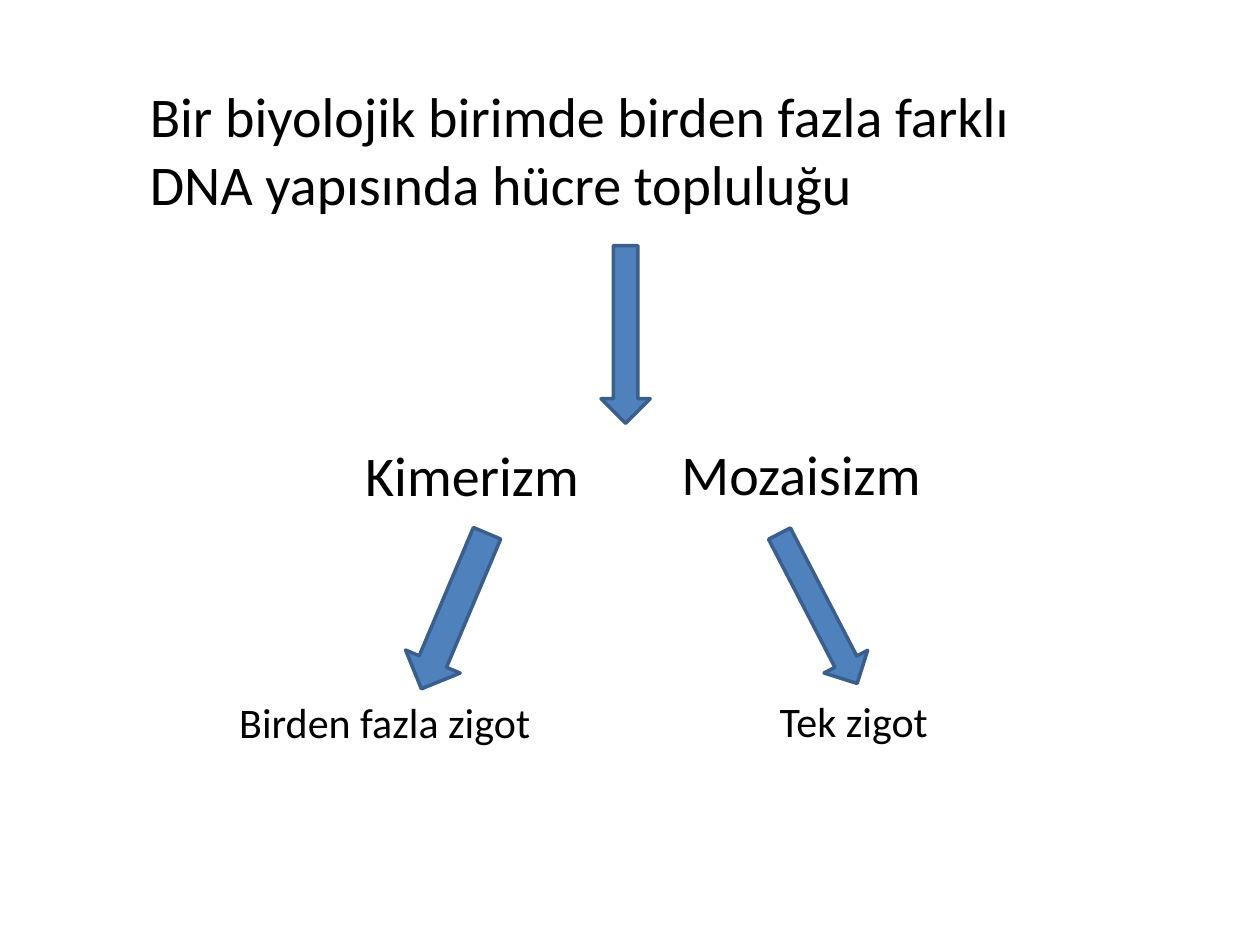
from dataclasses import dataclass

import pptx
import pptx.dml.color
import pptx.enum.shapes
import pptx.util
from pptx.util import Inches


@dataclass(frozen=True)
class Theme:
    font: str = "Calibri"
    text: str = "000000"
    fill: str = "4F81BD"
    line: str = "3A5F8C"
    heading: int = 32
    detail: int = 24
    outline: int = 2


def rgb(value):
    return pptx.dml.color.RGBColor.from_string(value)


class Diagram:
    def __init__(self, slide, theme):
        self.slide = slide
        self.theme = theme

    def label(self, text, left, top, width, height, size):
        box = self.slide.shapes.add_textbox(
            Inches(left), Inches(top), Inches(width), Inches(height))
        tf = box.text_frame
        tf.word_wrap = True
        tf.text = text
        font = tf.paragraphs[0].runs[0].font
        font.name = self.theme.font
        font.size = pptx.util.Pt(size)
        font.color.rgb = rgb(self.theme.text)

    def down_arrow(self, left, top, width, height, rotation=0):
        s = self.slide.shapes.add_shape(
            pptx.enum.shapes.MSO_SHAPE.DOWN_ARROW,
            Inches(left), Inches(top), Inches(width), Inches(height))
        s.rotation = rotation
        s.shadow.inherit = False
        s.fill.solid()
        s.fill.fore_color.rgb = rgb(self.theme.fill)
        s.line.color.rgb = rgb(self.theme.line)
        s.line.width = pptx.util.Pt(self.theme.outline)


def main():
    prs = pptx.Presentation()
    prs.slide_width, prs.slide_height = Inches(10), Inches(7.5)
    theme = Theme()
    diagram = Diagram(prs.slides.add_slide(prs.slide_layouts[6]), theme)

    diagram.label("Bir biyolojik birimde birden fazla farklı DNA yapısında hücre topluluğu",
                  1.09, 0.6, 7.81, 1.18, theme.heading)
    diagram.down_arrow(4.77, 1.95, 0.39, 1.41)

    diagram.label("Kimerizm", 2.8, 3.45, 2.2, 0.64, theme.heading)
    diagram.down_arrow(3.37, 4.18, 0.47, 1.34, rotation=22.9)
    diagram.label("Birden fazla zigot", 1.8, 5.48, 2.81, 0.5, theme.detail)

    diagram.label("Mozaisizm", 5.31, 3.44, 2.13, 0.64, theme.heading)
    diagram.down_arrow(6.3, 4.16, 0.39, 1.34, rotation=332.6)
    diagram.label("Tek zigot", 6.09, 5.47, 2.03, 0.52, theme.detail)

    prs.save("out.pptx")


if __name__ == "__main__":
    main()
